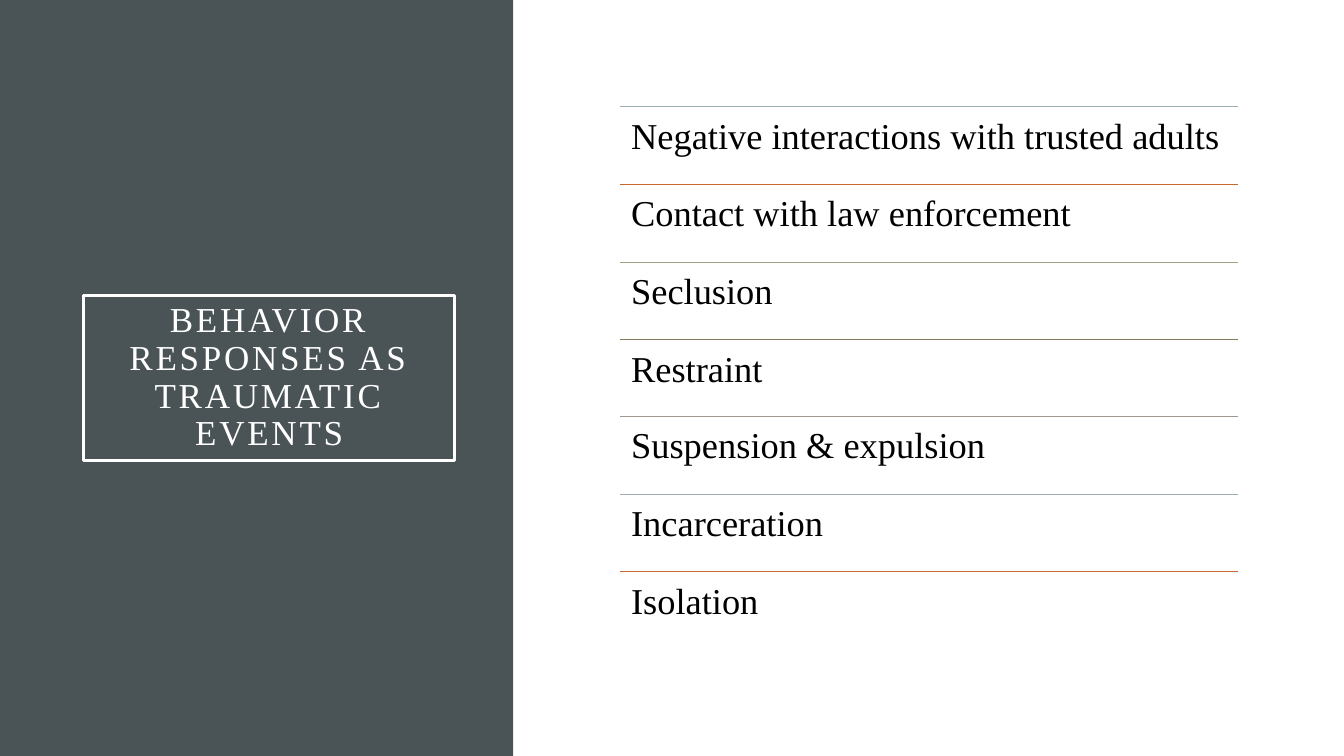
from pptx import Presentation
from pptx.dml.color import RGBColor
from pptx.enum.shapes import MSO_CONNECTOR, MSO_SHAPE
from pptx.enum.text import MSO_ANCHOR, PP_ALIGN
from pptx.oxml.ns import qn
from pptx.util import Pt
from lxml import etree

RECT = MSO_SHAPE.RECTANGLE
STRAIGHT = MSO_CONNECTOR.STRAIGHT
TOP, MIDDLE = MSO_ANCHOR.TOP, MSO_ANCHOR.MIDDLE
LEFT, CENTER = PP_ALIGN.LEFT, PP_ALIGN.CENTER

EMU_PER_PX = 9144
FONT = "Times New Roman"
COLORS = {
    "panel": "4A5356",
    "white": "FFFFFF",
    "black": "000000",
    "blue": "9BAFB5",
    "orange": "C96731",
    "green": "9CA383",
    "brown": "87795D",
    "taupe": "A0988C",
}
TITLE = "BEHAVIOR RESPONSES AS TRAUMATIC EVENTS"
EVENTS = [
    ("Negative interactions with trusted adults", "blue"),
    ("Contact with law enforcement", "orange"),
    ("Seclusion", "green"),
    ("Restraint", "brown"),
    ("Suspension & expulsion", "taupe"),
    ("Incarceration", "blue"),
    ("Isolation", "orange"),
]
LIST_LEFT, LIST_TOP, LIST_WIDTH, LIST_HEIGHT = 615, 106, 613, 538


def px(n):
    return n * EMU_PER_PX


def color(name):
    return RGBColor.from_string(COLORS[name])


def add_rect(slide, x, y, w, h, fill=None, line=None):
    sp = slide.shapes.add_shape(RECT, px(x), px(y), px(w), px(h))
    sp.shadow.inherit = False
    if fill:
        sp.fill.solid()
        sp.fill.fore_color.rgb = color(fill)
    else:
        sp.fill.background()
    if line:
        sp.line.color.rgb = color(line)
        sp.line.width = Pt(2.5)
    else:
        sp.line.fill.background()
    return sp


def write_text(sp, text, size, ink, inset, anchor, align, spacing=0):
    tf = sp.text_frame
    tf.word_wrap = True
    tf.vertical_anchor = anchor
    tf.margin_left = tf.margin_right = px(inset)
    tf.margin_top = tf.margin_bottom = px(inset)
    p = tf.paragraphs[0]
    p.alignment = align
    p.line_spacing = 0.9
    p.font.name = FONT
    p.font.size = Pt(size)
    p.font.color.rgb = color(ink)
    r = p.add_run()
    r.text = text
    if spacing:
        r._r.get_or_add_rPr().set("spc", str(spacing * 100))


def add_rule(slide, x, y, w, ink):
    rule = slide.shapes.add_connector(STRAIGHT, px(x), px(y), px(x + w), px(y))
    rule.line.color.rgb = color(ink)
    rule.line.width = Pt(0.5)
    etree.SubElement(rule._element.spPr, qn("a:effectLst"))


def add_event(slide, x, y, w, h, text, ink):
    add_rule(slide, x, y, w, ink)
    sp = slide.shapes.add_textbox(px(x), px(y), px(w), px(h))
    write_text(sp, text, 26, "black", 11, TOP, LEFT)


def main():
    prs = Presentation()
    prs.slide_width, prs.slide_height = px(1333), px(750)
    slide = prs.slides.add_slide(prs.slide_layouts[6])

    add_rect(slide, 0, 0, 509, 750, fill="panel")
    title = add_rect(slide, 83, 293, 368, 164, line="white")
    write_text(title, TITLE, 25, "white", 20, MIDDLE, CENTER, spacing=2)

    pitch = LIST_HEIGHT / len(EVENTS)
    for i, (text, ink) in enumerate(EVENTS):
        y = LIST_TOP + round(i * pitch)
        add_event(slide, LIST_LEFT, y, LIST_WIDTH, round(pitch), text, ink)

    prs.save("out.pptx")


if __name__ == "__main__":
    main()
